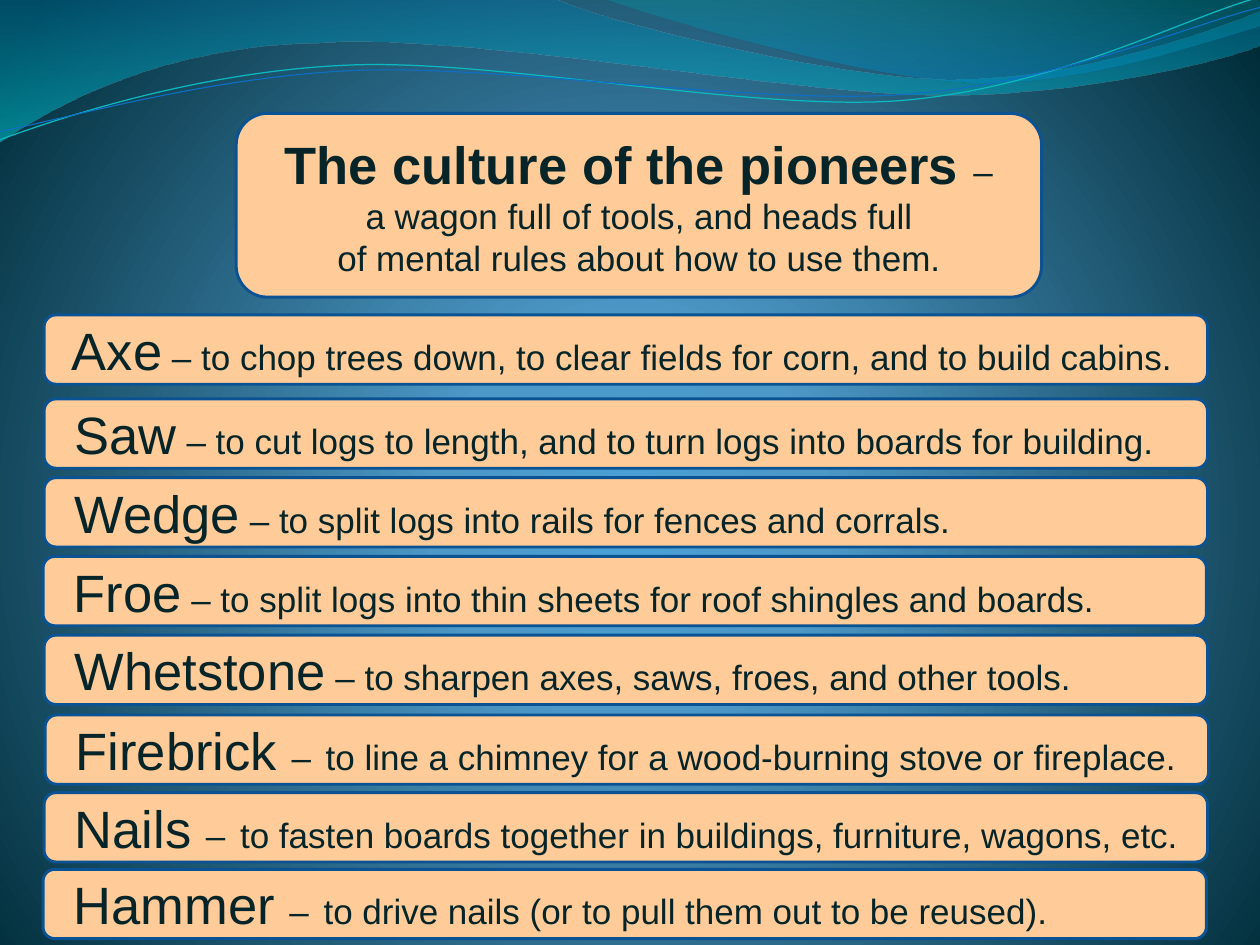
"""Builds a slide on the tools that the pioneers carried and what each was for."""
from lxml import etree
from pptx import Presentation
from pptx import util as u
from pptx.dml.color import RGBColor
from pptx.enum import shapes, text
from pptx.oxml import ns

COLORS = {
    "panel": "FFCC99", "border": "0B5292", "ink": "072428",
    "glow": "4AA0D6", "sky": "4C98C7", "edge": "002C38",
    "blue": "0074A1", "cyan": "00C6CF", "teal": "00A1A9", "azure": "008BBF",
    "thread_teal": "0AB8BF", "thread_blue": "0F6FC6",
}
BIG, SMALL = 36, 24


def add_span(para, words, size=SMALL, bold=False):
    span = para.add_run()
    span.text = words
    span.font.name = "Arial"
    span.font.size = u.Pt(size)
    span.font.bold = bold
    span.font.color.rgb = RGBColor.from_string(COLORS["ink"])


def set_gradient(holder, stops, circle=False):
    old = holder.find(ns.qn("a:solidFill"))
    gradient = etree.Element(ns.qn("a:gradFill"), rotWithShape="1")
    stop_list = etree.SubElement(gradient, ns.qn("a:gsLst"))
    for place, name, opacity in stops:
        stop = etree.SubElement(stop_list, ns.qn("a:gs"), pos=str(place * 1000))
        color = etree.SubElement(stop, ns.qn("a:srgbClr"), val=COLORS[name])
        if opacity < 100:
            etree.SubElement(color, ns.qn("a:alpha"), val=str(opacity * 1000))
    if circle:
        shade = etree.SubElement(gradient, ns.qn("a:path"), path="circle")
        etree.SubElement(shade, ns.qn("a:fillToRect"),
                         l="10000", t="110000", r="10000", b="100000")
    else:
        etree.SubElement(gradient, ns.qn("a:lin"), ang="5400000", scaled="0")
    holder.replace(old, gradient)


deck = Presentation()
deck.slide_width, deck.slide_height = u.Inches(12), u.Inches(9)
page = deck.slides.add_slide(deck.slide_layouts[6])

page.background.fill.solid()
page.background.fill.fore_color.rgb = RGBColor.from_string(COLORS["edge"])
set_gradient(page._element.find(".//" + ns.qn("p:bgPr")),
             [(0, "glow", 100), (25, "sky", 100), (100, "edge", 100)], circle=True)

# Each segment holds one point for a line or three for a Bezier curve.
waves = [
    ((0, -0.01), [
        [(5.28, -0.01)],
        [(5.71, 0.2), (7.96, 0.76), (9.1, 0.76)],
        [(10.24, 0.76), (11.5, 0.31), (12, 0.11)],
        [(12.01, 0.43)],
        [(11.8, 0.53), (10.44, 0.91), (8.95, 0.91)],
        [(7.46, 0.9), (4.58, 0.33), (3.09, 0.41)],
        [(1.55, 0.43), (0.55, 0.99), (-0.01, 1.36)],
        [(0, -0.01)],
    ], [(0, "blue", 45), (100, "cyan", 55)], None),
    ((5.75, -0.01), [
        [(6.11, 0.13), (8.18, 0.74), (9.22, 0.78)],
        [(10.27, 0.83), (11.54, 0.38), (12, 0.25)],
        [(12, 0)],
        [(5.75, -0.01)],
    ], [(0, "teal", 30), (80, "azure", 45)], None),
    ((0, 1.33), [
        [(0.58, 1.12), (1.89, 0.68), (3.32, 0.62)],
        [(4.74, 0.56), (7.11, 1.06), (8.55, 0.96)],
        [(10, 0.85), (11.26, 0.18), (11.97, -0.02)],
    ], None, ("thread_teal", 0.85)),
    ((0, 1.25), [
        [(0.57, 1.15), (1.96, 0.73), (3.4, 0.67)],
        [(4.83, 0.62), (7.17, 1), (8.6, 0.9)],
        [(10.04, 0.8), (11.29, 0.25), (12, 0.07)],
    ], None, ("thread_blue", 0.75)),
]
for start, segments, stops, stroke in waves:
    builder = page.shapes.build_freeform(u.Inches(start[0]), u.Inches(start[1]))
    builder.add_line_segments([(u.Inches(x), u.Inches(y))
                               for segment in segments for x, y in segment],
                              close=stops is not None)
    wave = builder.convert_to_shape()
    lines = iter(wave._element.findall(".//" + ns.qn("a:lnTo")))
    for segment in segments:
        pieces = [next(lines) for point in segment]
        if len(pieces) == 3:
            curve = etree.Element(ns.qn("a:cubicBezTo"))
            pieces[0].addprevious(curve)
            for piece in pieces:
                curve.append(piece[0])
                piece.getparent().remove(piece)
    wave.shadow.inherit = False
    if stops:
        wave.fill.solid()
        set_gradient(wave._element.spPr, stops)
        wave.line.fill.background()
    else:
        wave.fill.background()
        wave.line.color.rgb = RGBColor.from_string(COLORS[stroke[0]])
        wave.line.width = u.Pt(stroke[1])

title = [
    [("The culture of the pioneers ", BIG, True), ("–", SMALL, False)],
    [("a wagon full of tools, and heads full", SMALL, False)],
    [("of mental rules about how to use them.", SMALL, False)],
]
panels = [(2.25, 1.08, 7.67, 1.75, text.PP_ALIGN.CENTER, title)]

tools = [
    (0.42, 3, "Axe", "to chop trees down, to clear fields for corn, and to build cabins."),
    (0.42, 3.8, "Saw", "to cut logs to length, and to turn logs into boards for building."),
    (0.42, 4.55, "Wedge", "to split logs into rails for fences and corrals."),
    (0.41, 5.3, "Froe", "to split logs into thin sheets for roof shingles and boards."),
    (0.42, 6.05, "Whetstone", "to sharpen axes, saws, froes, and other tools."),
    (0.43, 6.81, "Firebrick", "to line a chimney for a wood-burning stove or fireplace."),
    (0.42, 7.55, "Nails", "to fasten boards together in buildings, furniture, wagons, etc."),
    (0.41, 8.28, "Hammer", "to drive nails (or to pull them out to be reused)."),
]
wide_dash = {"Firebrick", "Nails", "Hammer"}
for left, top, tool, use in tools:
    if tool in wide_dash:
        spans = [(f" {tool} ", BIG, False), ("–", SMALL, False),
                 (" ", BIG, False), (use, SMALL, False)]
    else:
        spans = [(f" {tool}", BIG, False), (f" – {use}", SMALL, False)]
    panels.append((left, top, 11.08, 0.66, text.PP_ALIGN.LEFT, [spans]))

for left, top, width, height, align, lines in panels:
    box = page.shapes.add_shape(shapes.MSO_SHAPE.ROUNDED_RECTANGULAR_CALLOUT,
                                u.Inches(left), u.Inches(top),
                                u.Inches(width), u.Inches(height))
    for index, value in enumerate((-0.21, 0.5, 0.17)):
        box.adjustments[index] = value
    box.shadow.inherit = False
    box.fill.solid()
    box.fill.fore_color.rgb = RGBColor.from_string(COLORS["panel"])
    box.line.color.rgb = RGBColor.from_string(COLORS["border"])
    box.line.width = u.Pt(2)
    frame = box.text_frame
    frame.word_wrap = True
    frame.vertical_anchor = text.MSO_ANCHOR.MIDDLE
    frame.margin_left = frame.margin_right = u.Inches(0.12)
    frame.margin_top = frame.margin_bottom = u.Inches(0.06)
    for index, line in enumerate(lines):
        para = frame.add_paragraph() if index else frame.paragraphs[0]
        para.alignment = align
        for words, size, bold in line:
            add_span(para, words, size=size, bold=bold)

deck.save("out.pptx")
